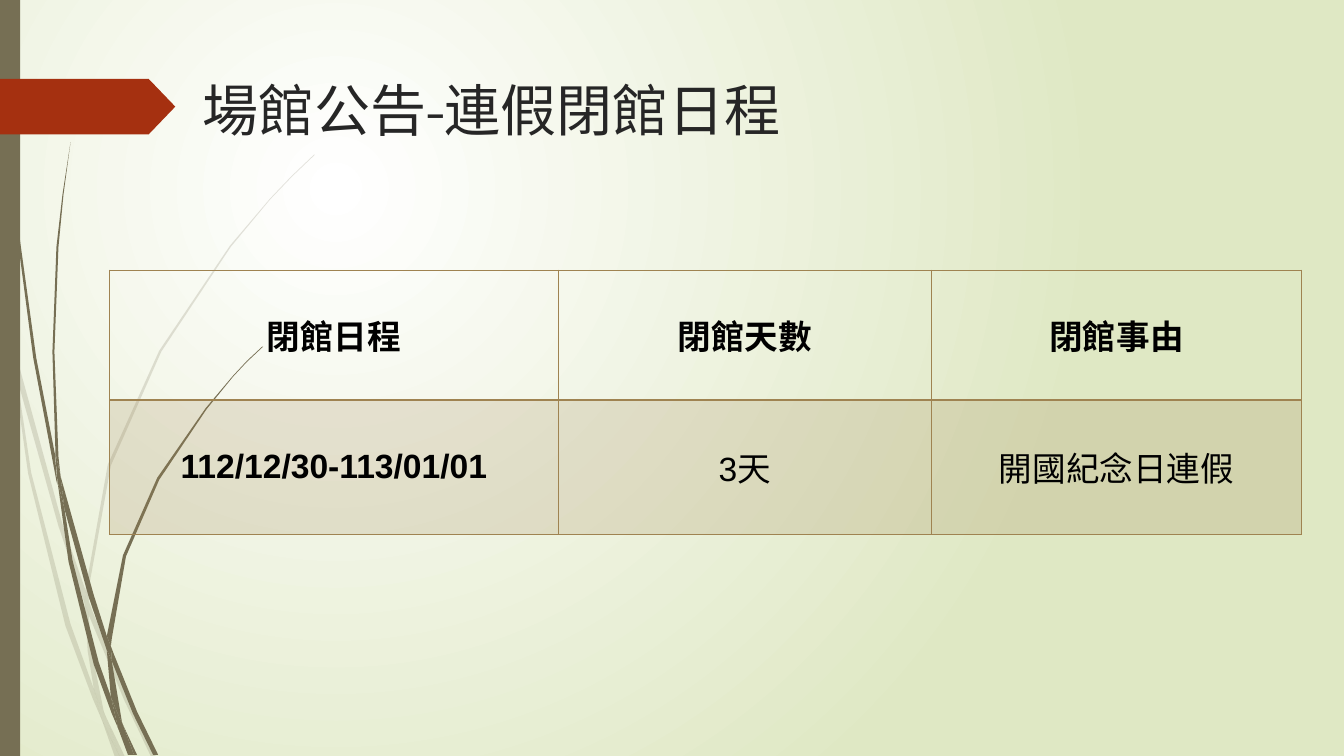
from dataclasses import dataclass

from lxml import etree
from pptx import Presentation
from pptx import util as u
from pptx.dml.color import RGBColor
from pptx.enum import shapes, text
from pptx.oxml import ns


@dataclass(frozen=True)
class Theme:
    bark: str = "766F54"
    ribbon: str = "A53010"
    title: str = "262626"
    ink: str = "000000"
    rule: str = "9F8351"
    glow: str = "FFFFFF"
    meadow: str = "DFE8C4"
    title_font: str = "TeX Gyre Adventor"
    table_font: str = "Arial"
    title_size: int = 40
    table_size: int = 24
    tint: int = 20


# Blade corners count in steps of GRASS_STEP points.
GRASS_STEP = 0.72
PALE_BLADES = [
    [(11, 350), (9, 322), (0, 282), (0, 299), (10, 344)],
    [(58, 522), (84, 599), (85, 586), (62, 520), (14, 345), (17, 376)],
    [(92, 607), (88, 596), (88, 610), (123, 694), (150, 751), (155, 751), (127, 692)],
    [(119, 751), (124, 751), (105, 711)],
    [(93, 683), (70, 619), (31, 469), (17, 376), (11, 350), (28, 470), (65, 621),
     (92, 693), (101, 714), (99, 707)],
    [(84, 599), (87, 646), (93, 683), (96, 692), (105, 711), (103, 706), (91, 646),
     (88, 610), (88, 608)],
    [(88, 584), (110, 462), (160, 349), (229, 245), (268, 198), (290, 175), (312, 154),
     (312, 153), (289, 175), (268, 197), (228, 244), (158, 348), (107, 461), (85, 584),
     (85, 586), (88, 596)],
    [(101, 714), (114, 751), (119, 751)],
    [(88, 608), (88, 610), (88, 596), (85, 586), (84, 599)],
    [(96, 692), (93, 683), (99, 707), (101, 714), (119, 751), (105, 711)],
]
DARK_BLADES = [
    [(7, 110), (17, 233), (33, 355), (56, 477), (57, 481), (55, 457), (55, 453),
     (36, 355), (19, 232), (8, 109), (5, 48), (4, 0), (3, 0), (4, 48)],
    [(88, 592), (106, 645), (106, 631), (93, 590), (60, 472), (64, 505)],
    [(113, 649), (110, 641), (111, 656), (132, 708), (152, 749), (157, 749), (136, 706)],
    [(110, 691), (98, 657), (72, 556), (64, 505), (57, 477), (68, 557), (93, 659),
     (111, 708), (117, 722), (116, 717)],
    [(60, 472), (58, 453), (54, 349), (58, 245), (63, 193), (70, 141), (62, 193),
     (56, 245), (52, 349), (55, 449)],
    [(133, 749), (136, 749), (122, 719)],
    [(57, 477), (64, 505), (60, 472), (55, 449), (55, 453)],
    [(111, 633), (125, 552), (158, 476), (205, 406), (231, 374), (245, 359), (261, 344),
     (260, 344), (245, 358), (231, 373), (204, 405), (156, 474), (122, 551), (106, 631),
     (110, 641)],
    [(117, 722), (127, 749), (131, 749)],
    [(106, 645), (110, 691), (116, 706), (122, 719), (121, 716), (111, 656), (109, 651)],
    [(106, 645), (109, 651), (111, 656), (110, 641), (106, 631)],
    [(116, 706), (110, 691), (116, 717), (117, 722), (130, 749), (133, 749), (122, 719)],
]
CLOSURES = [
    ["閉館日程", "閉館天數", "閉館事由"],
    ["112/12/30-113/01/01", "3天", "開國紀念日連假"],
]


def set_alpha(element, percent):
    color = element.find(".//" + ns.qn("a:srgbClr"))
    etree.SubElement(color, ns.qn("a:alpha"), val=str(percent * 1000))


class SlideBuilder:
    def __init__(self, page, theme):
        self.page, self.theme = page, theme

    def backdrop(self):
        fill = self.page.background.fill
        fill.gradient()
        for stop, color in zip(fill.gradient_stops, (self.theme.glow, self.theme.meadow)):
            stop.color.rgb = RGBColor.from_string(color)
        linear = self.page.element.find(".//" + ns.qn("a:lin"))
        circle = etree.Element(ns.qn("a:path"), path="circle")
        etree.SubElement(circle, ns.qn("a:fillToRect"),
                         l="50000", t="50000", r="100000", b="100000")
        linear.getparent().replace(linear, circle)

    def paint(self, shape, color):
        shape.shadow.inherit = False
        shape.fill.solid()
        shape.fill.fore_color.rgb = RGBColor.from_string(color)
        shape.line.fill.background()
        return shape

    def block(self, kind, left, top, width, height, color):
        shape = self.page.shapes.add_shape(
            kind, u.Pt(left), u.Pt(top), u.Pt(width), u.Pt(height))
        return self.paint(shape, color)

    def blade(self, corners, alpha=100):
        outline = self.page.shapes.build_freeform(*corners[0], scale=u.Pt(GRASS_STEP))
        outline.add_line_segments(corners[1:], close=True)
        shape = self.paint(outline.convert_to_shape(), self.theme.bark)
        if alpha < 100:
            set_alpha(shape.element.spPr, alpha)

    def style(self, para, font, size, color, bold=False):
        para.font.name, para.font.size, para.font.bold = font, u.Pt(size), bold
        para.font.color.rgb = RGBColor.from_string(color)

    def title(self, words, left, top, width, height):
        box = self.page.shapes.add_textbox(
            u.Pt(left), u.Pt(top), u.Pt(width), u.Pt(height))
        box.text_frame.word_wrap = True
        para = box.text_frame.paragraphs[0]
        para.text = words
        self.style(para, self.theme.title_font, self.theme.title_size, self.theme.title)

    def borders(self, cell, widths):
        """Set left, right, top and bottom border widths of a cell."""
        properties = cell._tc.get_or_add_tcPr()
        for place, (side, width) in enumerate(zip("LRTB", widths)):
            line = etree.Element(ns.qn("a:ln" + side), w=str(u.Pt(width)))
            fill = etree.SubElement(line, ns.qn("a:solidFill"))
            etree.SubElement(fill, ns.qn("a:srgbClr"), val=self.theme.rule)
            properties.insert(place, line)

    def table(self, rows, left, top, widths, heights):
        grid = self.page.shapes.add_table(
            len(rows), len(widths), u.Pt(left), u.Pt(top),
            u.Pt(sum(widths)), u.Pt(sum(heights))).table
        grid.horz_banding = False
        for column, width in zip(grid.columns, widths):
            column.width = u.Pt(width)
        for i, (row, height) in enumerate(zip(rows, heights)):
            grid.rows[i].height = u.Pt(height)
            for j, words in enumerate(row):
                self.cell(grid.cell(i, j), words, header=i == 0, bold=i == 0 or j == 0)

    def cell(self, cell, words, header, bold):
        cell.vertical_anchor = text.MSO_ANCHOR.MIDDLE
        cell.margin_left = cell.margin_right = u.Pt(5)
        cell.margin_top = cell.margin_bottom = u.Pt(0)
        para = cell.text_frame.paragraphs[0]
        para.text = words
        para.alignment = text.PP_ALIGN.CENTER
        self.style(para, self.theme.table_font, self.theme.table_size, self.theme.ink, bold)
        if header:
            cell.fill.background()
        else:
            cell.fill.solid()
            cell.fill.fore_color.rgb = RGBColor.from_string(self.theme.rule)
            set_alpha(cell._tc.tcPr, self.theme.tint)
        self.borders(cell, (1, 1, 1, 2) if header else (1, 1, 2, 1))


def main():
    deck = Presentation()
    deck.slide_width, deck.slide_height = u.Pt(960), u.Pt(540)
    theme = Theme()
    slide = SlideBuilder(deck.slides.add_slide(deck.slide_layouts[6]), theme)
    slide.backdrop()
    for corners in PALE_BLADES:
        slide.blade(corners, theme.tint)
    for corners in DARK_BLADES:
        slide.blade(corners)
    slide.block(shapes.MSO_SHAPE.RECTANGLE, 0, 0, 14.4, 540, theme.bark)
    ribbon = slide.block(shapes.MSO_SHAPE.PENTAGON, 0, 56.3, 125.2, 39.8, theme.ribbon)
    ribbon.adjustments[0] = 0.48
    slide.title("場館公告-連假閉館日程", 137.5, 50.4, 792, 126.7)
    slide.table(CLOSURES, 78.3, 193, (320.4, 266.6, 264.6), (92.9, 95.8))
    deck.save("out.pptx")


if __name__ == "__main__":
    main()
